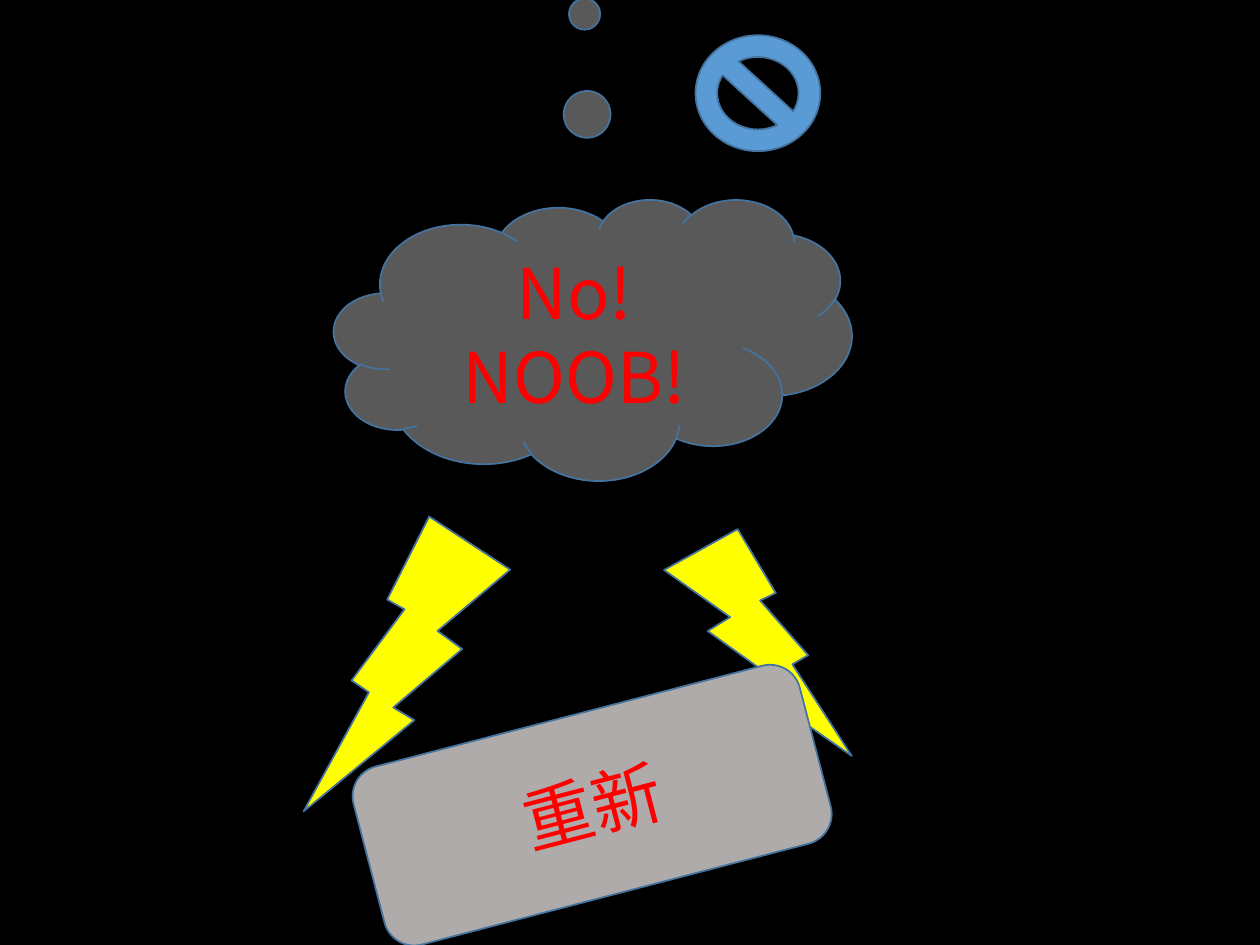
from lxml.etree import SubElement
from pptx import Presentation
from pptx.dml.color import RGBColor
from pptx.enum.shapes import MSO_SHAPE
from pptx.enum.text import MSO_ANCHOR, PP_ALIGN
from pptx.oxml.ns import qn
from pptx.util import Inches, Pt

BLACK = RGBColor(0x00, 0x00, 0x00)
BLUE = RGBColor(0x5B, 0x9B, 0xD5)
EDGE = RGBColor(0x43, 0x73, 0x9E)
YELLOW = RGBColor(0xFF, 0xFF, 0x00)
DARK = RGBColor(0x59, 0x59, 0x59)
GRAY = RGBColor(0xAF, 0xAB, 0xAB)
RED = RGBColor(0xFF, 0x00, 0x00)
FONT = "Noto Sans CJK JP"

BOLT = MSO_SHAPE.LIGHTNING_BOLT
SHAPES = [
    {"kind": MSO_SHAPE.NO_SYMBOL, "at": (5.52, 0.28, 0.99, 0.92), "fill": BLUE},
    {"kind": BOLT, "at": (5.27, 4.2, 1.49, 1.8), "fill": YELLOW},
    {"kind": MSO_SHAPE.CLOUD_CALLOUT, "at": (2.65, 1.58, 4.11, 2.23),
     "fill": DARK, "tail": (-0.02, -1.46), "text": "No!NOOB!"},
    {"kind": BOLT, "at": (2.41, 4.1, 1.64, 2.34), "fill": YELLOW, "flip": True},
    {"kind": MSO_SHAPE.ROUNDED_RECTANGLE, "at": (2.87, 5.66, 3.66, 1.46),
     "fill": GRAY, "turn": 345.4, "text": "重新"},
]


def write(shape, text):
    frame = shape.text_frame
    frame.word_wrap = True
    frame.vertical_anchor = MSO_ANCHOR.MIDDLE
    para = frame.paragraphs[0]
    para.alignment = PP_ALIGN.CENTER
    run = para.add_run()
    run.text = text
    run.font.size = Pt(40)
    run.font.color.rgb = RED
    run.font.name = FONT
    SubElement(run.font._element, qn("a:ea")).set("typeface", FONT)


def draw(slide, item):
    shape = slide.shapes.add_shape(item["kind"], *map(Inches, item["at"]))
    shape.shadow.inherit = False
    shape.fill.solid()
    shape.fill.fore_color.rgb = item["fill"]
    shape.line.color.rgb = EDGE
    shape.line.width = Pt(1)
    shape.rotation = item.get("turn", 0)
    for i, value in enumerate(item.get("tail", ())):
        shape.adjustments[i] = value
    if item.get("flip"):
        shape._element.spPr.xfrm.set("flipH", "1")
    if "text" in item:
        write(shape, item["text"])


def main():
    deck = Presentation()
    deck.slide_width, deck.slide_height = Inches(10), Inches(7.5)
    slide = deck.slides.add_slide(deck.slide_layouts[6])
    back = slide.background.fill
    back.solid()
    back.fore_color.rgb = BLACK
    for item in SHAPES:
        draw(slide, item)
    deck.save("out.pptx")


if __name__ == "__main__":
    main()
